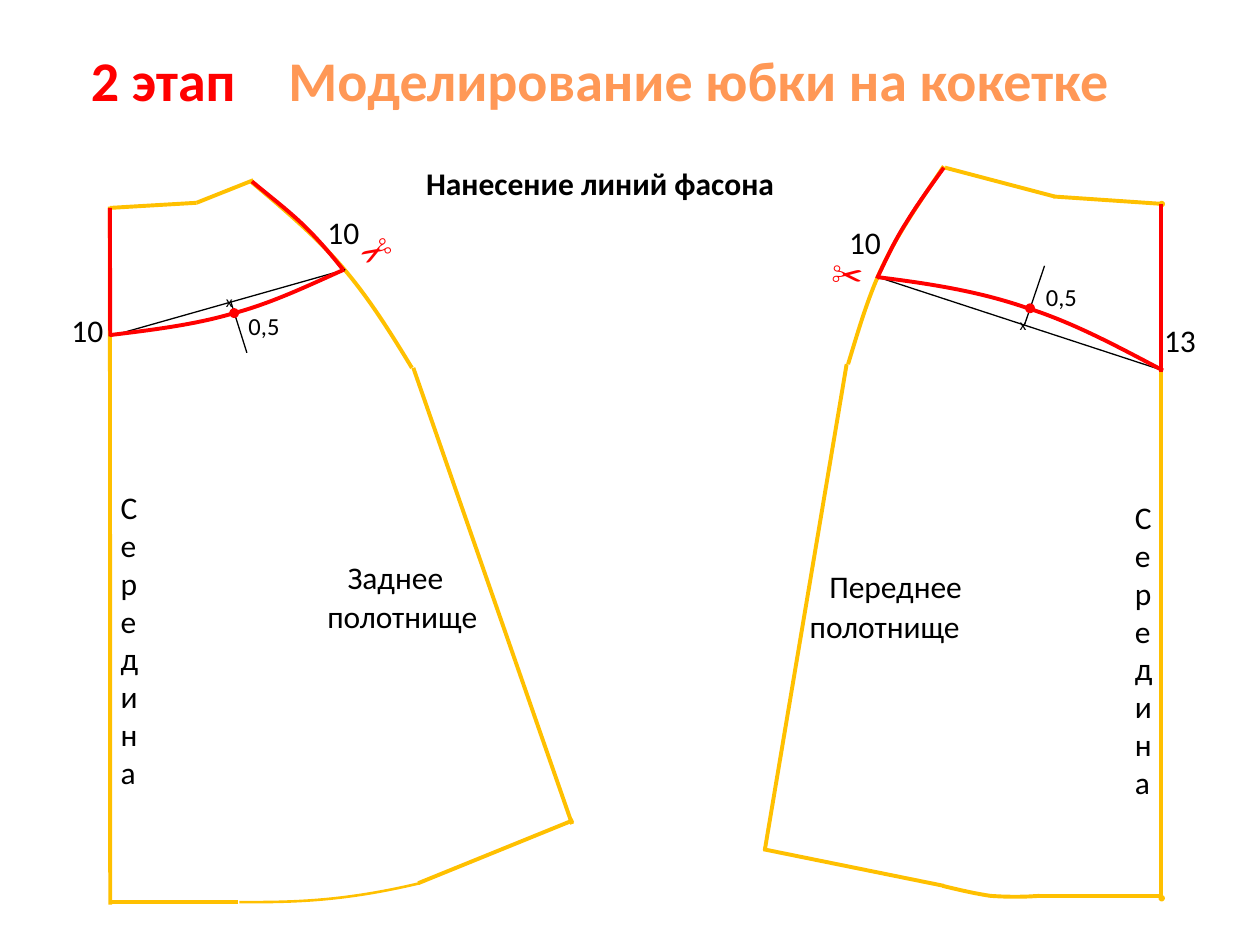
from math import cos, radians, sin
from lxml.etree import SubElement
from pptx import Presentation
from pptx.dml.color import RGBColor
from pptx.enum.shapes import MSO_CONNECTOR as Connector, MSO_SHAPE as Shape
from pptx.enum.text import MSO_AUTO_SIZE as AutoSize, PP_ALIGN as Align
from pptx.oxml.ns import qn
from pptx.util import Pt

GOLD = RGBColor(0xFF, 0xC0, 0x00)
RED = RGBColor(0xFF, 0x00, 0x00)
BLACK = RGBColor(0x00, 0x00, 0x00)
ORANGE = RGBColor(0xFF, 0x98, 0x56)
BLUE = RGBColor(0x4F, 0x81, 0xBD)


class Pattern:
    """Draws sewing pattern elements on one slide, measured in points."""

    font = "Calibri"

    def __init__(self, page):
        self.page = page

    def line(self, start, end, color=GOLD, width=2.25):
        line = self.page.shapes.add_connector(
            Connector.STRAIGHT, *(Pt(value) for value in (*start, *end)))
        line.line.color.rgb = color
        line.line.width = Pt(width)
        SubElement(line._element.spPr, qn("a:effectLst"))

    def curve(self, points, turn=0, color=GOLD, width=2.25):
        middle_x, middle_y = ((a + b) / 2 for a, b in zip(points[0], points[-1]))
        cosine, sine = cos(radians(turn)), sin(radians(turn))
        start, *rest = [
            (Pt(middle_x + (x - middle_x) * cosine + (y - middle_y) * sine),
             Pt(middle_y - (x - middle_x) * sine + (y - middle_y) * cosine))
            for x, y in points]
        builder = self.page.shapes.build_freeform(*start)
        builder.add_line_segments(rest, close=False)
        shape = builder.convert_to_shape()
        segments = list(shape._element.iter(qn("a:lnTo")))
        outline = segments[0].getparent()
        for first in range(0, len(segments), 3):
            bezier = SubElement(outline, qn("a:cubicBezTo"))
            for segment in segments[first:first + 3]:
                bezier.append(segment[0])
                outline.remove(segment)
        shape.rotation = turn
        shape.shadow.inherit = False
        shape.fill.background()
        shape.line.color.rgb = color
        shape.line.width = Pt(width)

    def dot(self, left, top, size, fill=RED, color=RED, width=2):
        dot = self.page.shapes.add_shape(Shape.OVAL, Pt(left), Pt(top), Pt(size), Pt(size))
        dot.shadow.inherit = False
        dot.fill.solid()
        dot.fill.fore_color.rgb = fill
        dot.line.color.rgb = color
        dot.line.width = Pt(width)

    def text(self, lines, left, top, width, height=29.1, size=18, color=BLACK,
             bold=False, wrap=True, align=Align.LEFT, turn=0):
        box = self.page.shapes.add_textbox(Pt(left), Pt(top), Pt(width), Pt(height))
        box.rotation = turn
        frame = box.text_frame
        frame.word_wrap = wrap
        frame.auto_size = AutoSize.SHAPE_TO_FIT_TEXT
        frame.text = "\n".join(lines)
        for para in frame.paragraphs:
            para.alignment = align
            para.font.name = self.font
            para.font.size = Pt(size)
            para.font.bold = bold
            para.font.color.rgb = color

    def cross(self, left, top):
        self.text(["х"], left, top, 11.5, 18, size=9, wrap=False, align=Align.CENTER)

    def length(self, value, left, top):
        self.text([value], left, top, 33.1, wrap=False)

    def offset(self, left, top):
        self.text(["0,5"], left, top, 32.4, 24.2, size=14, wrap=False)

    def scissors(self, left, top, turn):
        self.text(["✂"], left, top, 35.3, color=RED, bold=True, wrap=False, turn=turn)

    def middle(self, left, top):
        self.text("Середина", left, top, 33.8, 247)


def draw_back(pattern):
    for start, end in (
            ((327.6, 468.7), (239, 504.7)), ((236.2, 210.2), (326.9, 470.9)),
            ((112.3, 115.9), (144.7, 103)), ((136.1, 515.5), (63, 515.5)),
            ((63, 517), (62.8, 118.1)), ((62.8, 118.8), (112.3, 115.9))):
        pattern.line(start, end)
    pattern.curve([(136.8, 515.5), (165.6, 515.5), (194.4, 515.5), (239.8, 504.7)], width=1.5)
    pattern.curve([(143.3, 103.7), (161.3, 118.8), (179.3, 133.9), (194.4, 151.2),
                   (210.2, 169.2), (223.2, 190.1), (235.4, 210.2)], 340.2)
    pattern.text(["Заднее"], 191.5, 315.2, 73.4)
    pattern.text(["полотнище"], 180, 337.7, 100.8, wrap=False)
    pattern.middle(61.9, 275.5)
    pattern.line((62.8, 118.8), (63, 192.2), RED)
    pattern.curve([(144, 103.7), (152.6, 110.9), (162, 118.1), (170.6, 126),
                   (180, 134.6), (188.6, 144.7), (196.6, 154.8)], 325.6, RED)
    pattern.line((62.8, 192.2), (197.3, 154.1), BLACK, 0.75)
    pattern.cross(124.6, 162.9)
    pattern.line((131.8, 172.1), (141.1, 201.6), BLACK, 0.75)
    pattern.dot(132, 177.1, 3.6)
    pattern.curve([(196.6, 154.1), (175.7, 163.4), (154.8, 173.5), (132.5, 179.3),
                   (110.2, 185.8), (86.4, 188.6), (62.8, 191.5)], 95.7, RED)
    pattern.length("10", 33.8, 174.2)
    pattern.length("10", 180, 118.1)
    pattern.scissors(196.1, 131, 149.7)
    pattern.offset(134.9, 174.2)


def draw_front(pattern):
    for top in (115.9, 512.6):
        pattern.dot(663.1, top, 1.4, BLUE, GOLD, 2.25)
    pattern.curve([(484.6, 208.1), (491, 187.2), (496.8, 167), (506.2, 148.3),
                   (515.5, 129.6), (527.8, 112.3), (539.3, 95)], 6.1)
    for start, end in (
            ((663.6, 116.6), (663.6, 513.4)), ((601.9, 112.3), (665.3, 116.6)),
            ((540, 95.8), (602.6, 112.3)), ((436.3, 485.3), (539.3, 506.2)),
            ((483.8, 208.1), (437, 486)), ((663.6, 511.9), (590.4, 511.9))):
        pattern.line(start, end)
    pattern.curve([(594, 511.9), (584.6, 512.6), (575.3, 512.6), (565.9, 511.9),
                   (556.6, 510.5), (547.2, 508.3), (538.6, 506.2)], 256.5)
    pattern.text(["Переднее"], 466.8, 320.4, 100.8)
    pattern.text(["полотнище"], 455.6, 343.4, 101.5)
    pattern.middle(641.5, 281.2)
    pattern.line((663.6, 116.6), (663.6, 212.4), RED)
    pattern.curve([(501.1, 159.1), (506.2, 148.3), (511.2, 137.5), (517.7, 127.4),
                   (524.2, 116.6), (532.1, 105.8), (539.3, 95.8)], 222.7, RED)
    pattern.line((501.8, 158.4), (664.6, 211.7), BLACK, 0.75)
    pattern.cross(578.2, 176.4)
    pattern.line((596.9, 151.9), (585.4, 185.8), BLACK, 0.75)
    pattern.dot(586.8, 174.4, 3.6)
    pattern.curve([(501.8, 158.4), (530.6, 162), (558.7, 166.3), (586.1, 175.7),
                   (613.4, 184.3), (638.6, 198), (664.6, 211.7)], 311.5, RED)
    pattern.length("10", 478.1, 123.8)
    pattern.length("13", 658.1, 180)
    pattern.offset(590.6, 157.7)
    pattern.scissors(468.2, 142.4, 6.1)


def main():
    deck = Presentation()
    deck.slide_width, deck.slide_height = Pt(720), Pt(540)
    pattern = Pattern(deck.slides.add_slide(deck.slide_layouts[6]))
    draw_back(pattern)
    draw_front(pattern)
    pattern.text(["Моделирование юбки на кокетке"], 157.7, 22.3, 512, 46,
                 size=32, color=ORANGE, bold=True)
    pattern.text(["Нанесение линий фасона"], 236.4, 90, 230.4, bold=True)
    pattern.text(["2 этап"], 44.9, 22.3, 118, 46, size=32, color=RED, bold=True)
    deck.save("out.pptx")


if __name__ == "__main__":
    main()
